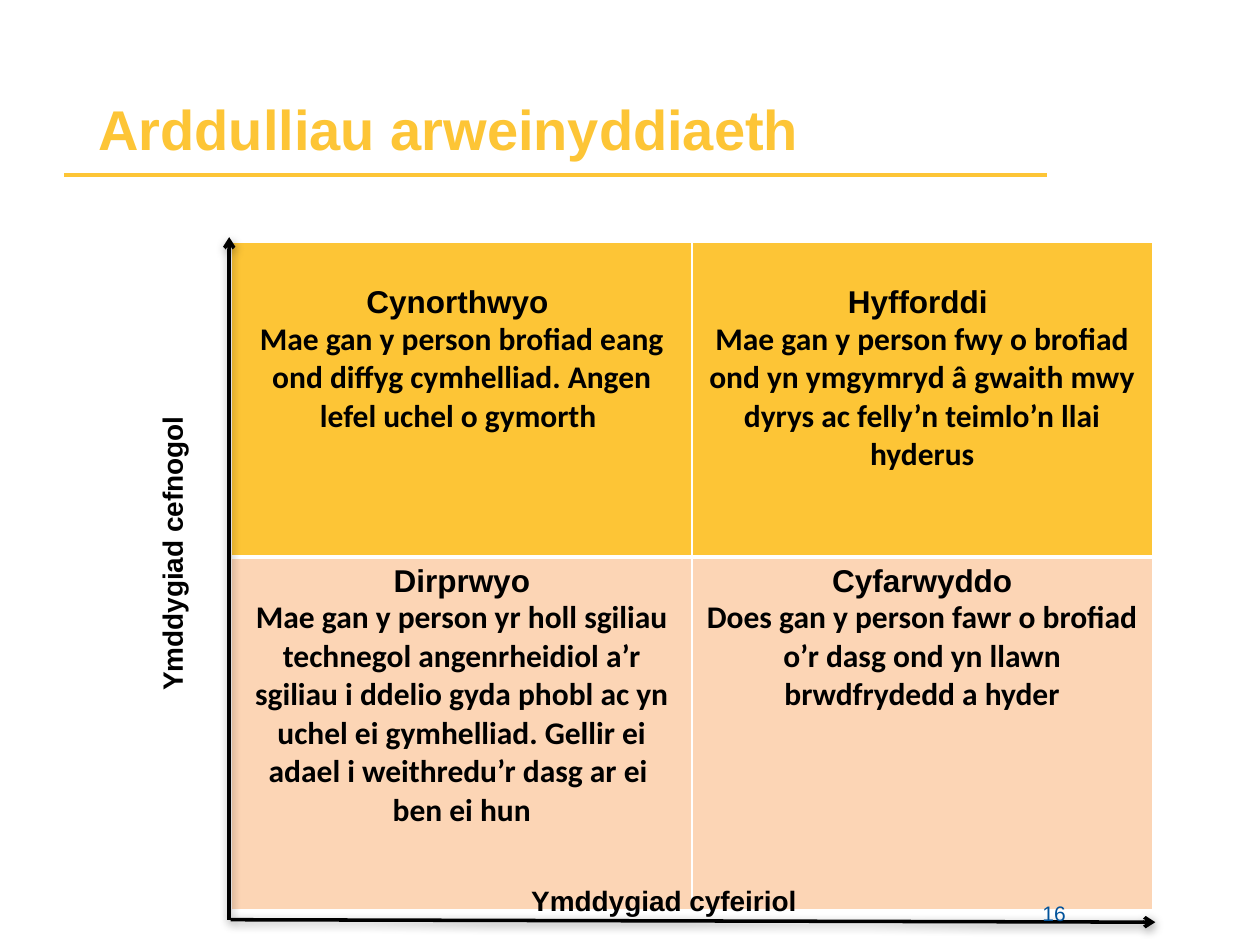
from dataclasses import dataclass

from lxml.etree import SubElement
from pptx import Presentation
from pptx.dml.color import RGBColor as Rgb
from pptx.enum.shapes import MSO_CONNECTOR as Connector
from pptx.enum.text import MSO_ANCHOR as Anchor, MSO_AUTO_SIZE as AutoSize, PP_ALIGN as Align
from pptx.oxml import parse_xml
from pptx.oxml.ns import nsdecls, qn
from pptx.util import Cm, Pt


@dataclass(frozen=True)
class Theme:
    gold: str = "FDC536"
    peach: str = "FCD5B5"
    ink: str = "000000"
    blue: str = "00529B"
    paper: str = "FFFFFF"
    heading_font: str = "Arial"
    body_font: str = "Calibri"
    title_size: int = 32
    cell_size: int = 18
    axis_size: int = 16
    number_size: int = 12


class SlideBuilder:
    def __init__(self, slide, theme):
        self.slide = slide
        self.theme = theme

    def fill_text(self, paragraph, text, size, color, font, bold=True, align=Align.LEFT):
        paragraph.text = text
        paragraph.alignment = align
        for run in paragraph.runs:
            for key, value in {"size": Pt(size), "name": font, "bold": bold}.items():
                setattr(run.font, key, value)
            run.font.color.rgb = Rgb.from_string(color)

    def title(self, text, left, top, width, height):
        heading = self.slide.shapes.title
        place = {"left": left, "top": top, "width": width, "height": height}
        for key, value in place.items():
            setattr(heading, key, Cm(value))
        frame = heading.text_frame
        for key, value in {"vertical_anchor": Anchor.BOTTOM, "auto_size": AutoSize.NONE}.items():
            setattr(frame, key, value)
        self.fill_text(frame.paragraphs[0], text, self.theme.title_size, self.theme.gold,
                       self.theme.heading_font)

    def line(self, start, end, color, arrow=False):
        stroke = self.slide.shapes.add_connector(
            Connector.STRAIGHT, *(Cm(value) for value in start + end))
        stroke.line.width = Pt(2)
        stroke.line.color.rgb = Rgb.from_string(color)
        properties = stroke._element.spPr
        effects = SubElement(properties, qn("a:effectLst"))
        if arrow:
            SubElement(properties.find(qn("a:ln")), qn("a:tailEnd"), type="arrow")
            shadow = SubElement(effects, qn("a:outerShdw"), blurRad=str(Pt(5)),
                                dist=str(Pt(1.6)), dir="5400000", rotWithShape="0")
            tint = SubElement(shadow, qn("a:srgbClr"), val=self.theme.ink)
            SubElement(tint, qn("a:alpha"), val="38000")

    def label(self, text, box, size, color, bold=True, align=Align.LEFT, vertical=False):
        frame = self.slide.shapes.add_textbox(*(Cm(value) for value in box)).text_frame
        frame.word_wrap = True
        if vertical:
            frame._txBody.bodyPr.set("vert", "vert270")
        self.fill_text(frame.paragraphs[0], text, size, color, self.theme.heading_font,
                       bold, align)

    def borders(self, cell, widths):
        properties = cell._tc.get_or_add_tcPr()
        for index, (side, width) in enumerate(widths.items()):
            properties.insert(index, parse_xml(
                f'<a:ln{side} {nsdecls("a")} w="{Pt(width)}"><a:solidFill>'
                f'<a:srgbClr val="{self.theme.paper}"/></a:solidFill></a:ln{side}>'))

    def matrix(self, quadrants, left, top, column_width, row_heights, fills, top_margins):
        columns = len(quadrants[0])
        table = self.slide.shapes.add_table(
            len(quadrants), columns, Cm(left), Cm(top),
            Cm(column_width * columns), Cm(sum(row_heights))).table
        table.horz_banding = False
        for column in table.columns:
            column.width = Cm(column_width)
        for row, styles in enumerate(quadrants):
            table.rows[row].height = Cm(row_heights[row])
            for column, (name, description) in enumerate(styles):
                cell = table.cell(row, column)
                cell.margin_top = Cm(top_margins[row])
                cell.fill.solid()
                cell.fill.fore_color.rgb = Rgb.from_string(fills[row])
                self.borders(cell, {"L": 1, "R": 1, "T": 3 if row else 1, "B": 1 if row else 3})
                frame = cell.text_frame
                parts = ((frame.paragraphs[0], name, self.theme.heading_font),
                         (frame.add_paragraph(), description, self.theme.body_font))
                for paragraph, text, font in parts:
                    self.fill_text(paragraph, text, self.theme.cell_size, self.theme.ink, font,
                                   align=Align.CENTER)


QUADRANTS = [
    [("Cynorthwyo ",
      "Mae gan y person brofiad eang ond diffyg cymhelliad. Angen lefel uchel o gymorth "),
     ("Hyfforddi ",
      "Mae gan y person fwy o brofiad ond yn ymgymryd â gwaith mwy dyrys ac felly’n "
      "teimlo’n llai hyderus")],
    [("Dirprwyo",
      "Mae gan y person yr holl sgiliau technegol angenrheidiol a’r sgiliau i ddelio gyda "
      "phobl ac yn uchel ei gymhelliad. Gellir ei adael i weithredu’r dasg ar ei \nben ei hun"),
     ("Cyfarwyddo",
      "Does gan y person fawr o brofiad o’r dasg ond yn llawn brwdfrydedd a hyder")],
]


def main():
    deck = Presentation()
    deck.slide_width, deck.slide_height = Cm(25.4), Cm(19.05)
    theme = Theme()
    page = SlideBuilder(deck.slides.add_slide(deck.slide_layouts[5]), theme)

    page.line((1.3, 3.53), (21.11, 3.53), theme.gold)
    page.matrix(QUADRANTS, 4.67, 4.88, 9.28, (6.35, 7.11),
                (theme.gold, theme.peach), (0.87, 0.13))
    page.title("Arddulliau arweinyddiaeth", 1.73, 0, 19.13, 3.38)
    page.line((4.65, 18.54), (23.29, 18.59), theme.ink, arrow=True)
    page.line((4.62, 18.54), (4.62, 4.78), theme.ink, arrow=True)
    page.label("Ymddygiad cyfeiriol", (10.46, 17.68, 6.96, 0.94), theme.axis_size, theme.ink)
    page.label("Ymddygiad cefnogol", (3, 3.89, 1.19, 10.29), theme.axis_size, theme.ink,
               vertical=True)
    page.label("16", (18.29, 18.03, 5.92, 1.02), theme.number_size, theme.blue,
               bold=False, align=Align.CENTER)
    deck.save("out.pptx")


if __name__ == "__main__":
    main()
